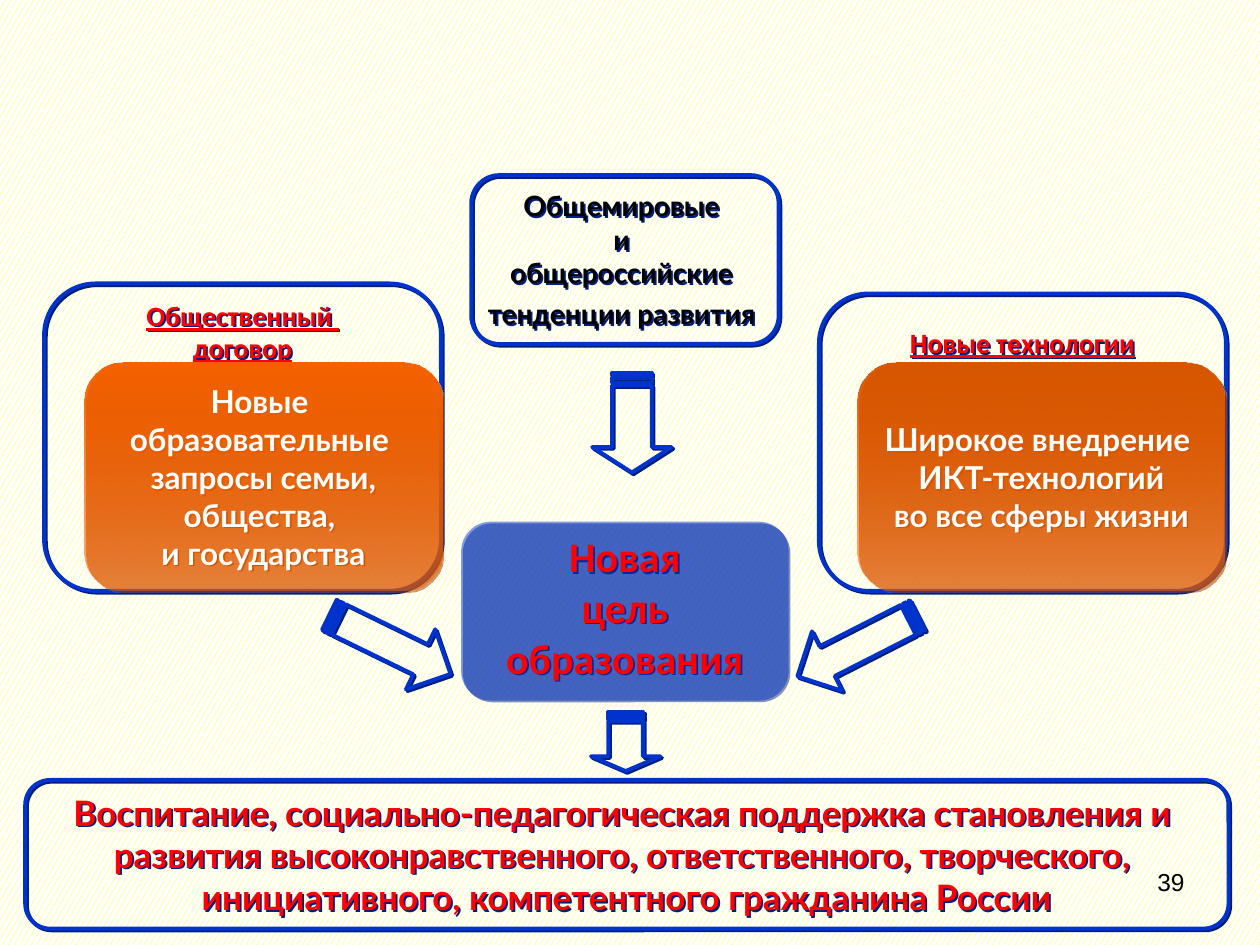
from dataclasses import dataclass
from typing import Optional

from lxml import etree
from pptx import Presentation
from pptx.dml.color import RGBColor
from pptx.enum.dml import MSO_PATTERN
from pptx.enum.shapes import MSO_SHAPE
from pptx.enum.text import MSO_ANCHOR, PP_ALIGN
from pptx.oxml.ns import qn
from pptx.util import Inches, Pt

ROUNDED = MSO_SHAPE.ROUNDED_RECTANGLE
STRIPED_ARROW = MSO_SHAPE.STRIPED_RIGHT_ARROW
CONFETTI = MSO_PATTERN.LARGE_CONFETTI
TOP, MIDDLE = MSO_ANCHOR.TOP, MSO_ANCHOR.MIDDLE
CENTER, RIGHT = PP_ALIGN.CENTER, PP_ALIGN.RIGHT

BLUE = RGBColor(0x00, 0x33, 0xCC)
NAVY = RGBColor(0x00, 0x1F, 0x7A)
BROWN = RGBColor(0x99, 0x3D, 0x00)
ORANGE = RGBColor(0xFF, 0x66, 0x00)
BRIGHT_ORANGE = RGBColor(0xF6, 0x62, 0x00)
DARK_ORANGE = RGBColor(0xD9, 0x57, 0x00)
RED = RGBColor(0xFF, 0x00, 0x00)
YELLOW = RGBColor(0xFF, 0xFF, 0x00)
WHITE = RGBColor(0xFF, 0xFF, 0xFF)
BLACK = RGBColor(0x00, 0x00, 0x00)


@dataclass
class Box:
    left: float
    top: float
    width: float
    height: float
    lines: tuple[str, ...]
    size: int
    font: str = "Lato"
    color: RGBColor = RED
    underline: bool = False
    spacing: float = 1.0
    gap: float = 0
    last_gap: Optional[float] = None
    anchor: MSO_ANCHOR = MIDDLE
    inset: float = 0.05
    solid: Optional[RGBColor] = None
    gradient_top: Optional[RGBColor] = None


@dataclass
class Arrow:
    left: float
    top: float
    width: float
    height: float
    rotation: int
    head: float


BOXES = (
    Box(3.66, 4.14, 2.6, 1.42, ("Новая", "цель", "образования"), 24,
        font="Calibri", spacing=0.8, gap=6, solid=BLUE),
    Box(6.5, 2.33, 3.23, 2.36, ("Новые технологии",), 16, font="Calibri",
        underline=True, spacing=0.75, anchor=TOP, inset=0.2),
    Box(0.35, 2.25, 3.15, 2.44, ("Общественный ", "договор"), 16,
        font="Calibri", underline=True, spacing=0.75, gap=4, anchor=TOP,
        inset=0.06),
    Box(0.67, 2.88, 2.84, 1.81,
        ("Новые ", "образовательные ", "запросы семьи,", "общества, ",
         "и государства"),
        18, color=WHITE, gradient_top=BRIGHT_ORANGE),
    Box(6.81, 2.88, 2.91, 1.81,
        ("Широкое внедрение ", "ИКТ-технологий", "во все сферы жизни"),
        18, color=WHITE, gradient_top=DARK_ORANGE),
    Box(3.74, 1.39, 2.44, 1.34,
        ("Общемировые ", "и ", "общероссийские ", "тенденции развития "),
        16, color=BLACK, last_gap=4),
    Box(0.2, 6.19, 9.55, 1.18,
        ("Воспитание, социально-педагогическая поддержка становления и ",
         "развития высоконравственного, ответственного, творческого, ",
         "инициативного, компетентного гражданина России"), 20),
)

ARROWS = (
    Arrow(4.73, 5.61, 0.47, 0.55, 90, 0.25),
    Arrow(2.56, 4.85, 1.07, 0.53, 26, 0.5),
    Arrow(6.27, 4.86, 1.07, 0.53, 153, 0.5),
    Arrow(4.62, 3.04, 0.79, 0.63, 90, 0.32),
)


def set_alpha(color_element, percent: int) -> None:
    etree.SubElement(color_element, qn("a:alpha"), val=str(percent * 1000))


def add_shadow(shape, color: RGBColor) -> None:
    shape.shadow.inherit = False
    effects = shape._element.spPr.find(qn("a:effectLst"))
    shadow = etree.SubElement(
        effects, qn("a:outerShdw"), blurRad="0", dist=str(Pt(1.4)),
        dir=str(45 * 60000), algn="ctr", rotWithShape="0")
    etree.SubElement(shadow, qn("a:srgbClr"), val=str(color))


def write_text(frame, lines, *, size, font, color, bold=True, underline=False,
               align=CENTER, spacing=1.0, gap=0, last_gap=None, anchor=MIDDLE,
               inset=0.05, wrap=False) -> None:
    frame.word_wrap = wrap
    frame.vertical_anchor = anchor
    frame.margin_left = frame.margin_right = Inches(0.1)
    frame.margin_top = Inches(inset)
    frame.margin_bottom = Inches(0.05)
    for index, line in enumerate(lines):
        paragraph = frame.add_paragraph() if index else frame.paragraphs[0]
        paragraph.alignment = align
        paragraph.line_spacing = spacing
        if index:
            is_last = index == len(lines) - 1
            before = last_gap if is_last and last_gap is not None else gap
            paragraph.space_before = Pt(before)
        run = paragraph.add_run()
        run.text = line
        run.font.size = Pt(size)
        run.font.name = font
        run.font.bold = bold
        run.font.underline = underline
        run.font.color.rgb = color


def outline(shape) -> None:
    shape.fill.background()
    shape.line.color.rgb = BLUE
    shape.line.width = Pt(2.25)
    add_shadow(shape, NAVY)


def draw_box(slide, box: Box) -> None:
    shape = slide.shapes.add_shape(
        ROUNDED, Inches(box.left), Inches(box.top),
        Inches(box.width), Inches(box.height))
    shape.adjustments[0] = 0.167
    properties = shape._element.spPr
    if box.gradient_top:
        shape.fill.gradient()
        shape.fill.gradient_angle = 270
        start, end = shape.fill.gradient_stops
        start.position, end.position = 0, 1
        start.color.rgb, end.color.rgb = box.gradient_top, ORANGE
        set_alpha(properties.findall(".//" + qn("a:srgbClr"))[-1], 50)
        shape.line.fill.background()
        add_shadow(shape, BROWN)
    elif box.solid:
        shape.fill.solid()
        shape.fill.fore_color.rgb = box.solid
        set_alpha(properties.find(".//" + qn("a:srgbClr")), 49)
        shape.line.fill.background()
        add_shadow(shape, NAVY)
    else:
        outline(shape)
    write_text(shape.text_frame, box.lines, size=box.size, font=box.font,
               color=box.color, underline=box.underline, spacing=box.spacing,
               gap=box.gap, last_gap=box.last_gap, anchor=box.anchor,
               inset=box.inset)


def draw_arrow(slide, arrow: Arrow) -> None:
    shape = slide.shapes.add_shape(
        STRIPED_ARROW, Inches(arrow.left), Inches(arrow.top),
        Inches(arrow.width), Inches(arrow.height))
    shape.adjustments[0] = 0.5
    shape.adjustments[1] = arrow.head
    shape.rotation = arrow.rotation
    outline(shape)


def main() -> None:
    deck = Presentation()
    deck.slide_width, deck.slide_height = Inches(10), Inches(7.5)
    slide = deck.slides.add_slide(deck.slide_layouts[6])
    backdrop = slide.background.fill
    backdrop.patterned()
    backdrop.pattern = CONFETTI
    backdrop.fore_color.rgb = YELLOW
    backdrop.back_color.rgb = WHITE

    page_number = slide.shapes.add_textbox(
        Inches(7.17), Inches(6.83), Inches(2.33), Inches(0.52))
    write_text(page_number.text_frame, ("39",), size=14, font="Arial",
               color=BLACK, bold=False, align=RIGHT, anchor=TOP, wrap=True)
    for box in BOXES:
        draw_box(slide, box)
    for arrow in ARROWS:
        draw_arrow(slide, arrow)
    deck.save("out.pptx")


if __name__ == "__main__":
    main()
